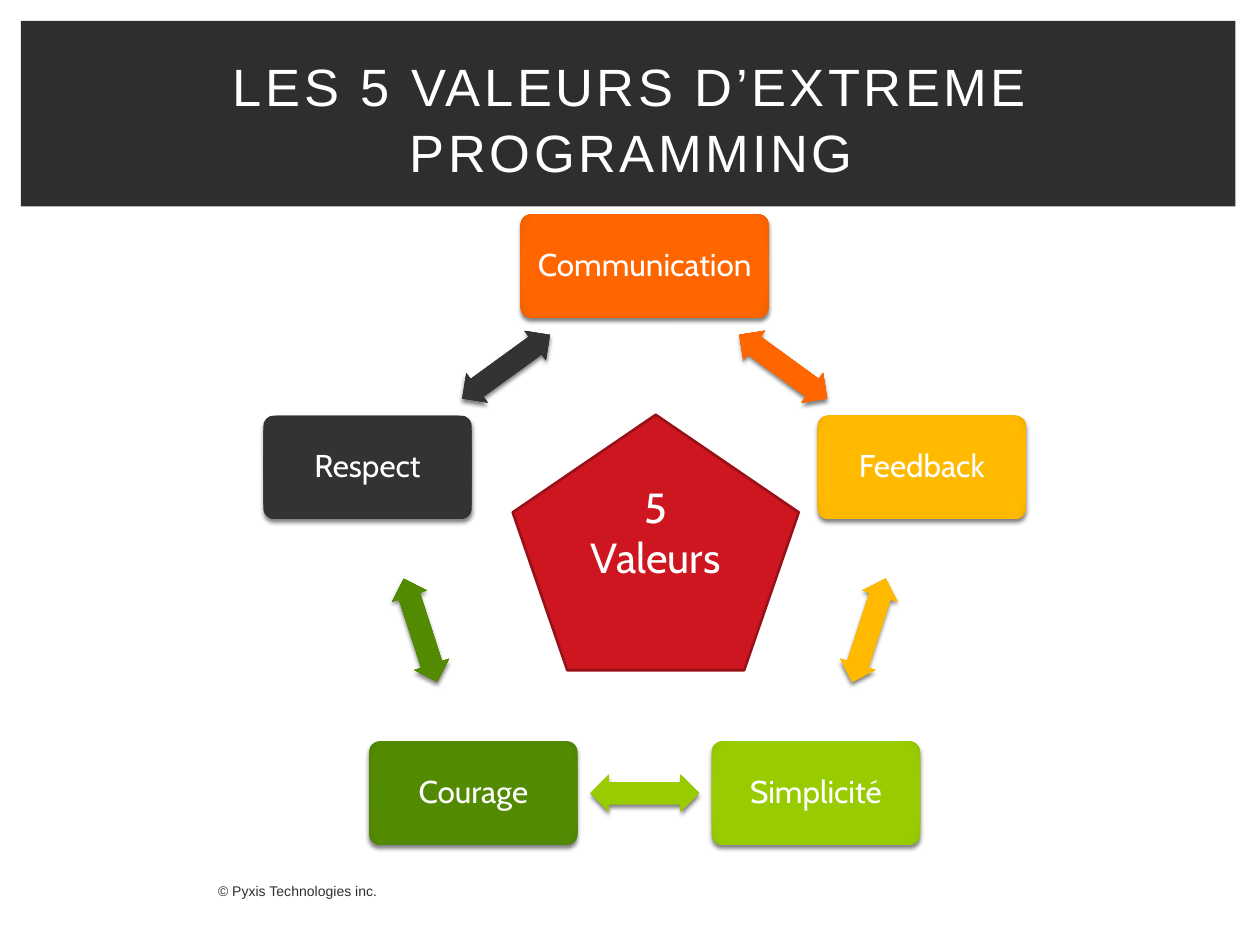
"""Build the slide of the five values of Extreme Programming as a cycle."""
from math import cos, radians, sin

from pptx import Presentation
from pptx.dml.color import RGBColor
from pptx.enum.shapes import MSO_SHAPE
from pptx.enum.text import MSO_ANCHOR, MSO_AUTO_SIZE, PP_ALIGN
from pptx.oxml import parse_xml
from pptx.oxml.ns import nsdecls, qn
from pptx.util import Pt

COLORS = {
    "dark": "2D2E2F", "white": "FFFFFF", "red": "CE1620", "red_line": "981018",
    "orange": "FF6600", "orange_edge": "EE5F00",
    "yellow": "FFBA00", "yellow_edge": "EEAD00",
    "lime": "99CC00", "lime_edge": "8FBE00",
    "green": "528A02", "green_edge": "4C8102",
    "gray": "333333", "gray_edge": "303030",
}
VALUES = [
    ("Communication", "orange", 142),
    ("Feedback", "yellow", 119),
    ("Simplicité", "lime", 119),
    ("Courage", "green", 119),
    ("Respect", "gray", 119),
]
CENTER_X, CENTER_Y, RADIUS = 368.4, 318.5, 166.5
BOX_HEIGHT = 59
ARROW_WIDTH, ARROW_HEIGHT = 62, 21
STEP = 360 / len(VALUES)


def rgb(name):
    return RGBColor.from_string(COLORS[name])


def set_attrs(obj, **formats):
    for name, value in formats.items():
        setattr(obj, name, value)


def set_text(sp, text, font, size, color="white", align=PP_ALIGN.CENTER, **frame):
    tf = sp.text_frame
    set_attrs(tf, **frame)
    p = tf.paragraphs[0]
    p.alignment = align
    r = p.add_run()
    r.text = text
    set_attrs(r.font, name=font, size=Pt(size))
    r.font.color.rgb = rgb(color)
    return p


def add_shape(s, kind, left, top, width, height, color):
    sp = s.shapes.add_shape(kind, Pt(left), Pt(top), Pt(width), Pt(height))
    sp.shadow.inherit = False
    sp.fill.solid()
    sp.fill.fore_color.rgb = rgb(color)
    sp.line.fill.background()
    return sp


def shade(sp, color):
    stops = "".join(
        f'<a:gs pos="{pos}"><a:srgbClr val="{COLORS[name]}"/></a:gs>'
        for pos, name in ((0, color), (90000, color), (100000, color + "_edge")))
    props = sp._element.spPr
    props.replace(props.find(qn("a:solidFill")), parse_xml(
        f'<a:gradFill {nsdecls("a")} rotWithShape="1"><a:gsLst>{stops}</a:gsLst>'
        '<a:path path="circle"><a:fillToRect l="100000" t="100000" r="100000" '
        'b="100000"/></a:path></a:gradFill>'))
    props.find(qn("a:effectLst")).append(parse_xml(
        f'<a:outerShdw {nsdecls("a")} blurRad="{Pt(2.5)}" dist="{Pt(2)}" dir="5400000" '
        'rotWithShape="0"><a:srgbClr val="000000"><a:alpha val="50000"/></a:srgbClr>'
        '</a:outerShdw>'))


def add_cycle_shape(s, kind, angle, radius, width, height, color, adjustments):
    x = CENTER_X + radius * sin(radians(angle))
    y = CENTER_Y - radius * cos(radians(angle))
    sp = add_shape(s, kind, x - width / 2, y - height / 2, width, height, color)
    for i, value in enumerate(adjustments):
        sp.adjustments[i] = value
    shade(sp, color)
    return sp


def add_value(s, index, label, color, width):
    angle = index * STEP
    box = add_cycle_shape(s, MSO_SHAPE.ROUNDED_RECTANGLE, angle, RADIUS,
                          width, BOX_HEIGHT, color, [0.1])
    p = set_text(box, label, "Cabin", 18, vertical_anchor=MSO_ANCHOR.MIDDLE,
                 margin_left=Pt(5), margin_right=Pt(5),
                 margin_top=Pt(5), margin_bottom=Pt(5))
    p.line_spacing = 0.9
    angle += STEP / 2
    arrow = add_cycle_shape(s, MSO_SHAPE.LEFT_RIGHT_ARROW, angle,
                            RADIUS * cos(radians(STEP / 2)),
                            ARROW_WIDTH, ARROW_HEIGHT, color, [0.6, 0.5])
    arrow.rotation = angle


def add_title(s, text):
    band = add_shape(s, MSO_SHAPE.RECTANGLE, 12, 12, 694, 106, "dark")
    title = s.shapes.title
    title._element.addprevious(band._element)
    set_attrs(title, left=Pt(29.5), top=Pt(16.5), width=Pt(663), height=Pt(101))
    p = set_text(title, text, "Arial", 30, word_wrap=True,
                 auto_size=MSO_AUTO_SIZE.NONE, vertical_anchor=MSO_ANCHOR.MIDDLE)
    p.line_spacing = 1.05
    p.runs[0].font._element.set("spc", "200")


def add_pentagon(s, text):
    sp = add_shape(s, MSO_SHAPE.REGULAR_PENTAGON, 293, 237, 163.5, 146, "red")
    sp.line.color.rgb = rgb("red_line")
    sp.line.width = Pt(1.5)
    set_text(sp, text, "Cabin", 24, vertical_anchor=MSO_ANCHOR.TOP)


def add_copyright(s, text):
    box = s.shapes.add_textbox(Pt(117.5), Pt(500.5), Pt(110), Pt(17))
    set_text(box, text, "Arial", 8, "dark", PP_ALIGN.LEFT, word_wrap=False)


def main():
    prs = Presentation()
    set_attrs(prs, slide_width=Pt(720), slide_height=Pt(540))
    s = prs.slides.add_slide(prs.slide_layouts[5])
    add_title(s, "LES 5 VALEURS D’EXTREME PROGRAMMING")
    add_copyright(s, "© Pyxis Technologies inc.")
    for index, value in enumerate(VALUES):
        add_value(s, index, *value)
    add_pentagon(s, "5 Valeurs")
    prs.save("out.pptx")


if __name__ == "__main__":
    main()
